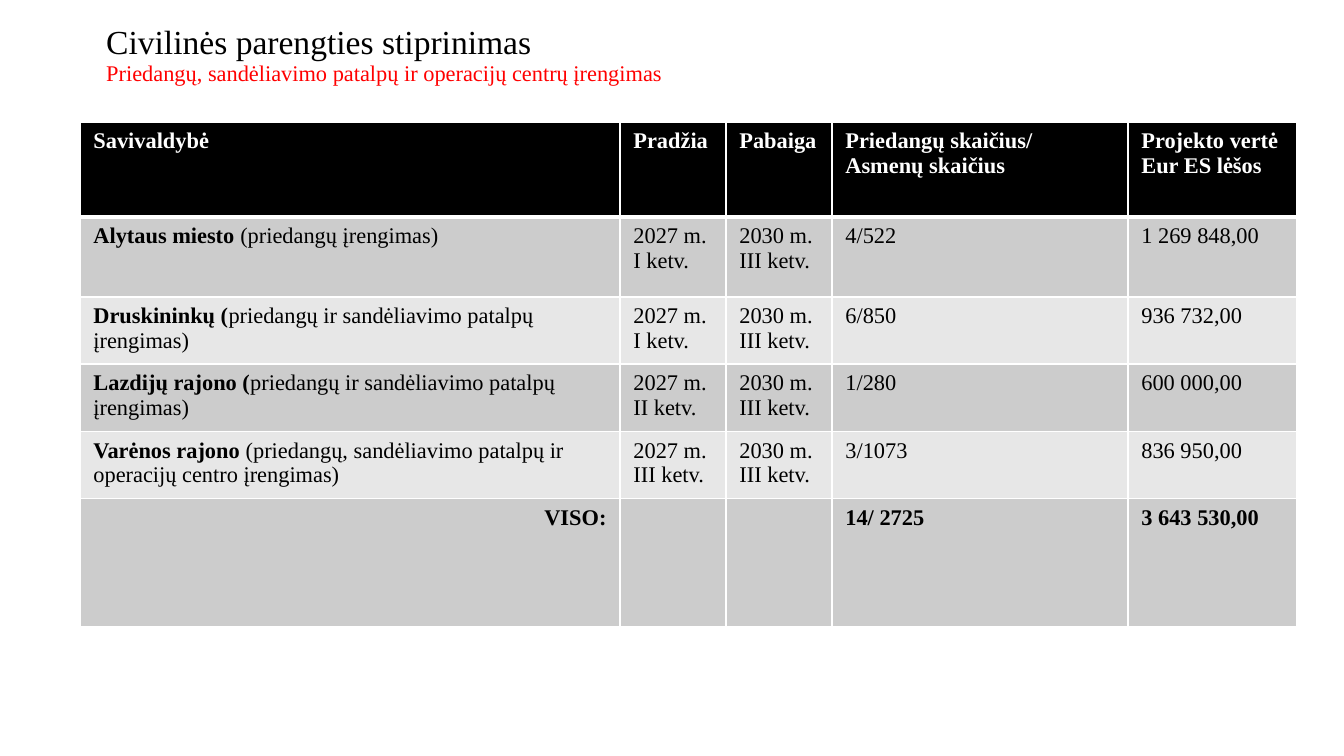
"""Build the slide on strengthening civil preparedness."""
from dataclasses import dataclass

from lxml.etree import SubElement
from pptx import Presentation
from pptx.dml.color import RGBColor
from pptx.enum.text import MSO_ANCHOR, PP_ALIGN as Align
from pptx.oxml.ns import qn
from pptx.util import Pt

PX = 914400 / 134.4
FONT = "Times New Roman"
BLACK, WHITE, RED = "000000", "FFFFFF", "FF0000"
BANDS = ("CCCCCC", "E7E7E7")
COLUMNS = (540, 106, 106, 296, 169)
HEADERS = ("Savivaldybė", "Pradžia", "Pabaiga",
           "Priedangų skaičius/ Asmenų skaičius", "Projekto vertė Eur ES lėšos")


@dataclass(frozen=True)
class Text:
    value: str
    bold: bool = False
    color: str = BLACK
    size: int = 12


@dataclass(frozen=True)
class Project:
    name: str
    works: str
    start: str
    shelters: str
    value: str
    height: int = 64
    end: str = "2030 m. III ketv."

    def cells(self) -> list[list[Text]]:
        """Return the runs of each cell in the row."""
        rest = (self.start, self.end, self.shelters, self.value)
        return [[Text(self.name, True), Text(self.works)], *([Text(v)] for v in rest)]


PROJECTS = (
    Project("Alytaus miesto ", "(priedangų įrengimas)", "2027 m. I ketv.",
            "4/522", "1 269 848,00", height=80),
    Project("Druskininkų (", "priedangų ir sandėliavimo patalpų įrengimas)",
            "2027 m. I ketv.", "6/850", "936 732,00"),
    Project("Lazdijų rajono (", "priedangų ir sandėliavimo patalpų įrengimas)",
            "2027 m. II ketv.", "1/280", "600 000,00"),
    Project("Varėnos rajono ", "(priedangų, sandėliavimo patalpų ir operacijų centro įrengimas)",
            "2027 m. III ketv.", "3/1073", "836 950,00"),
)
TOTALS = ("VISO:", "", "", "14/ 2725", "3 643 530,00")


def px(n: int) -> int:
    """Turn pixels into EMU."""
    return round(n * PX)


def rgb(value: str) -> RGBColor:
    """Turn a hex string into a colour."""
    return RGBColor.from_string(value)


def add_run(p, text: Text) -> None:
    """Add one formatted run to a paragraph."""
    r = p.add_run()
    r.text = text.value
    r.font.name = FONT
    r.font.size = Pt(text.size)
    r.font.bold = text.bold
    r.font.color.rgb = rgb(text.color)


def add_title(s) -> None:
    """Add the two-line title."""
    sp = s.shapes.add_textbox(px(93), px(19), px(1159), px(94))
    tf = sp.text_frame
    tf.word_wrap = True
    tf.vertical_anchor = MSO_ANCHOR.TOP
    p = tf.paragraphs[0]
    p.line_spacing = 0.9
    add_run(p, Text("Civilinės parengties stiprinimas", size=18))
    p.add_line_break()
    add_run(p, Text("Priedangų, sandėliavimo patalpų ir operacijų centrų įrengimas", color=RED))


def set_borders(cell, top: int, bottom: int) -> None:
    """Draw white borders around a cell, with widths in points."""
    tc_pr = cell._tc.get_or_add_tcPr()
    for side, width in (("L", 1), ("R", 1), ("T", top), ("B", bottom)):
        ln = SubElement(tc_pr, qn(f"a:ln{side}"), w=str(Pt(width)))
        fill = SubElement(ln, qn("a:solidFill"))
        SubElement(fill, qn("a:srgbClr"), val=WHITE)


def fill_row(table, row: int, cells: list[list[Text]], fill: str) -> None:
    """Write one table row with its fill and borders."""
    for column, texts in enumerate(cells):
        cell = table.cell(row, column)
        set_borders(cell, 3 if row == 1 else 1, 3 if row == 0 else 1)
        cell.fill.solid()
        cell.fill.fore_color.rgb = rgb(fill)
        for text in texts:
            if text.value:
                add_run(cell.text_frame.paragraphs[0], text)


def add_projects_table(s) -> None:
    """Add the table of municipalities with its totals."""
    heights = (95, *(project.height for project in PROJECTS), 128)
    frame = s.shapes.add_table(len(heights), len(COLUMNS), px(80), px(122),
                               px(sum(COLUMNS)), px(sum(heights)))
    table = frame.table
    for column, width in zip(table.columns, COLUMNS):
        column.width = px(width)
    for row, height in zip(table.rows, heights):
        row.height = px(height)
    fill_row(table, 0, [[Text(h, True, WHITE)] for h in HEADERS], BLACK)
    body = [project.cells() for project in PROJECTS]
    body.append([[Text(total, True)] for total in TOTALS])
    for i, cells in enumerate(body):
        fill_row(table, i + 1, cells, BANDS[i % 2])
    table.cell(len(body), 0).text_frame.paragraphs[0].alignment = Align.RIGHT


def main() -> None:
    """Build and save the presentation."""
    prs = Presentation()
    prs.slide_width, prs.slide_height = px(1344), px(756)
    s = prs.slides.add_slide(prs.slide_layouts[6])
    add_title(s)
    add_projects_table(s)
    prs.save("out.pptx")


if __name__ == "__main__":
    main()
